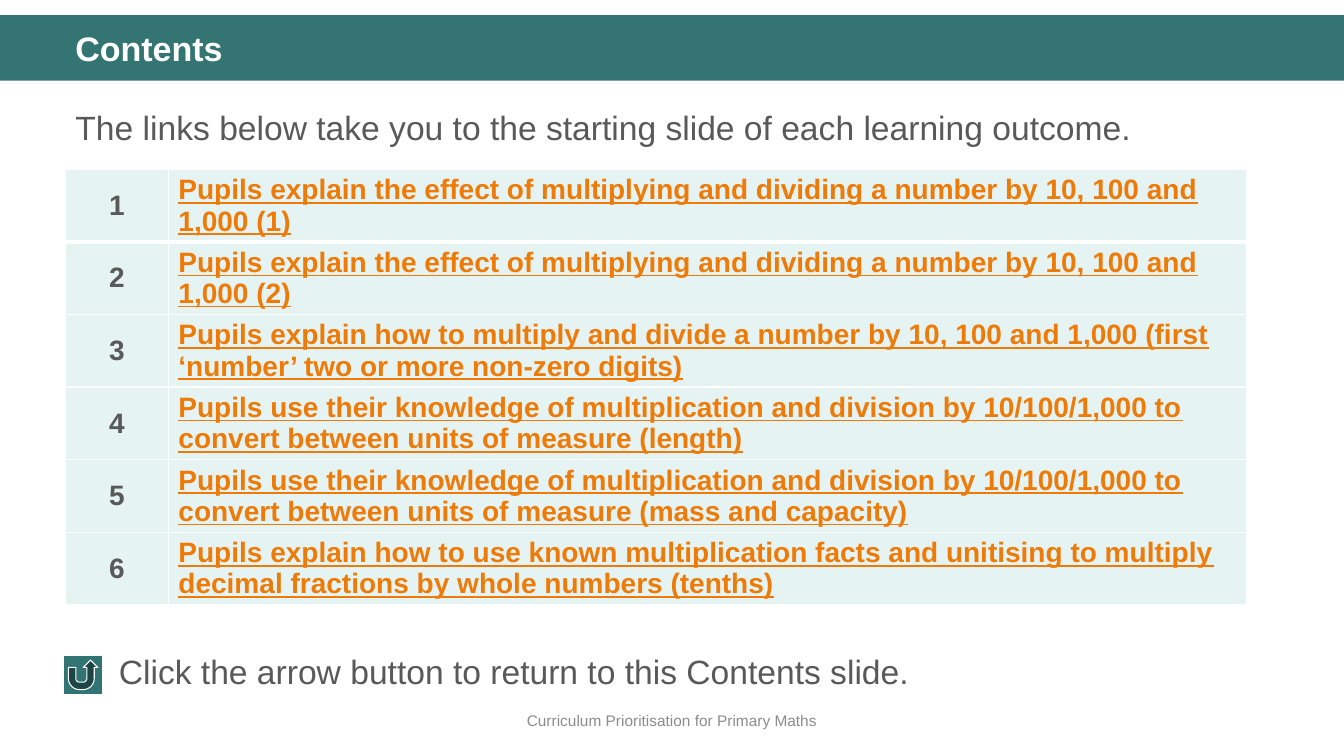
from typing import NamedTuple

from lxml.etree import SubElement
from pptx import Presentation
from pptx.dml.color import RGBColor
from pptx.enum.shapes import MSO_SHAPE
from pptx.enum.text import MSO_ANCHOR, PP_ALIGN
from pptx.oxml.ns import qn
from pptx.util import Inches, Pt

WIDTH, HEIGHT = 13.33, 7.5
MARGIN = 0.65
BODY_WIDTH = 12.18
NUMBER_COL, OUTCOME_COL, ROW = 1.02, 10.69, 0.72
WHITE, GREY, PALE, ORANGE = "FFFFFF", "595959", "E5F3F2", "EE7B08"

OUTCOMES = [
    "Pupils explain the effect of multiplying and dividing a number by 10, 100 and 1,000 (1)",
    "Pupils explain the effect of multiplying and dividing a number by 10, 100 and 1,000 (2)",
    "Pupils explain how to multiply and divide a number by 10, 100 and 1,000 "
    "(first ‘number’ two or more non-zero digits)",
    "Pupils use their knowledge of multiplication and division by 10/100/1,000 "
    "to convert between units of measure (length)",
    "Pupils use their knowledge of multiplication and division by 10/100/1,000 "
    "to convert between units of measure (mass and capacity)",
    "Pupils explain how to use known multiplication facts and unitising "
    "to multiply decimal fractions by whole numbers (tenths)",
]


class Box(NamedTuple):
    left: float
    top: float
    width: float
    height: float

    def emu(self) -> list[int]:
        return [Inches(v) for v in self]


class Label(NamedTuple):
    box: Box
    text: str
    style: dict


LABELS = [
    Label(Box(0, 6.95, WIDTH, 0.4), "Curriculum Prioritisation for Primary Maths",
          dict(size=11, color="8C8C8C", align=PP_ALIGN.CENTER, anchor=MSO_ANCHOR.MIDDLE)),
    Label(Box(MARGIN, 0.93, BODY_WIDTH, 0.6),
          "The links below take you to the starting slide of each learning outcome.",
          dict(spacing=1.2)),
    Label(Box(1.08, 6.41, 11.32, 0.5),
          "Click the arrow button to return to this Contents slide.", {}),
    Label(Box(MARGIN, 0.27, BODY_WIDTH, 0.47), "Contents",
          dict(size=24.3, color=WHITE, bold=True, spacing=0.9)),
]


def rgb(color: str) -> RGBColor:
    return RGBColor.from_string(color)


def write(tf, text: str, *, size=24, color=GREY, bold=False, underline=False,
          align=PP_ALIGN.LEFT, anchor=MSO_ANCHOR.TOP, spacing=None) -> None:
    tf.word_wrap = True
    tf.vertical_anchor = anchor
    p = tf.paragraphs[0]
    p.alignment = align
    p.line_spacing = spacing
    r = p.add_run()
    r.text = text
    r.font.name, r.font.size = "Arial", Pt(size)
    r.font.bold, r.font.underline = bold, underline
    r.font.color.rgb = rgb(color)


def add_filled(s, kind: MSO_SHAPE, box: Box, fill: str, line: str | None = None) -> None:
    sp = s.shapes.add_shape(kind, *box.emu())
    sp.shadow.inherit = False
    sp.fill.solid()
    sp.fill.fore_color.rgb = rgb(fill)
    if line:
        sp.line.color.rgb = rgb(line)
        sp.line.width = Pt(0.75)
    else:
        sp.line.fill.background()


def set_borders(cell, **widths: float) -> None:
    """Draw white borders; must run before the cell is filled."""
    tc_pr = cell._tc.get_or_add_tcPr()
    for side, width in widths.items():
        ln = SubElement(tc_pr, qn(f"a:ln{side}"), w=str(Pt(width)))
        SubElement(SubElement(ln, qn("a:solidFill")), qn("a:srgbClr"), val=WHITE)


def add_outcomes(s) -> None:
    box = Box(MARGIN, 1.68, NUMBER_COL + OUTCOME_COL, ROW * len(OUTCOMES))
    table = s.shapes.add_table(len(OUTCOMES), 2, *box.emu()).table
    table.first_row = table.horz_banding = False
    for column, width in zip(table.columns, (NUMBER_COL, OUTCOME_COL)):
        column.width = Inches(width)
    for i, outcome in enumerate(OUTCOMES):
        number, link = table.rows[i].cells
        for cell in (number, link):
            set_borders(cell, L=1, R=1, T=3 if i == 1 else 1, B=3 if i == 0 else 1)
            cell.fill.solid()
            cell.fill.fore_color.rgb = rgb(PALE)
            cell.vertical_anchor = MSO_ANCHOR.MIDDLE
        write(number.text_frame, str(i + 1), size=20, bold=True,
              align=PP_ALIGN.CENTER, anchor=None)
        write(link.text_frame, outcome, size=20, bold=True, color=ORANGE,
              underline=True, anchor=None)


def main() -> None:
    prs = Presentation()
    prs.slide_width, prs.slide_height = Inches(WIDTH), Inches(HEIGHT)
    s = prs.slides.add_slide(prs.slide_layouts[6])
    add_filled(s, MSO_SHAPE.RECTANGLE, Box(0, 0.15, WIDTH, 0.65), "347574")
    add_outcomes(s)
    add_filled(s, MSO_SHAPE.ACTION_BUTTON_RETURN, Box(0.63, 6.5, 0.39, 0.39),
               "327473", WHITE)
    for label in LABELS:
        tf = s.shapes.add_textbox(*label.box.emu()).text_frame
        write(tf, label.text, **label.style)
    prs.save("out.pptx")


if __name__ == "__main__":
    main()
